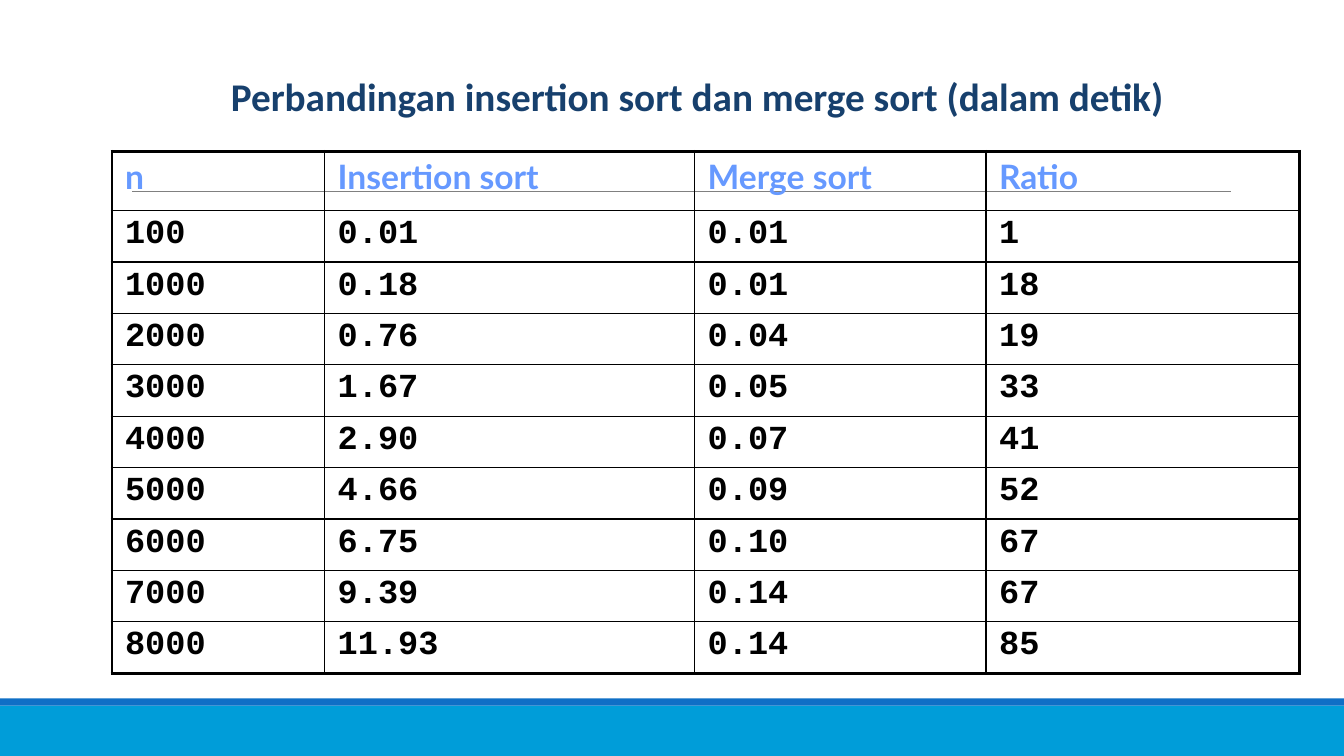
from lxml import etree
from pptx import Presentation
from pptx.dml.color import RGBColor
from pptx.enum.shapes import MSO_CONNECTOR, MSO_SHAPE
from pptx.enum.text import MSO_ANCHOR, PP_ALIGN
from pptx.oxml import parse_xml
from pptx.oxml.ns import nsdecls, qn
from pptx.util import Inches, Pt

SLIDE_WIDTH, SLIDE_HEIGHT = 13.33, 7.5
BLACK = "000000"
HEADER_COLOR = "6699FF"
COLUMN_WIDTHS = [2.11, 3.67, 2.89, 3.11]
HEADER_HEIGHT, ROW_HEIGHT = 0.59, 0.51
THIN, THICK = 1, 2.25

TIMINGS = [
    ("n", "Insertion sort", "Merge sort", "Ratio"),
    ("100", "0.01", "0.01", "1"),
    ("1000", "0.18", "0.01", "18"),
    ("2000", "0.76", "0.04", "19"),
    ("3000", "1.67", "0.05", "33"),
    ("4000", "2.90", "0.07", "41"),
    ("5000", "4.66", "0.09", "52"),
    ("6000", "6.75", "0.10", "67"),
    ("7000", "9.39", "0.14", "67"),
    ("8000", "11.93", "0.14", "85"),
]


def color(hex_code):
    return RGBColor.from_string(hex_code)


def set_font(font, name, size, hex_code):
    font.name, font.size, font.bold = name, Pt(size), True
    font.color.rgb = color(hex_code)


def add_bar(slide, top, height, hex_code):
    bar = slide.shapes.add_shape(
        MSO_SHAPE.RECTANGLE, 0, Inches(top), Inches(SLIDE_WIDTH), Inches(height))
    bar.shadow.inherit = False
    bar.fill.solid()
    bar.fill.fore_color.rgb = color(hex_code)
    bar.line.fill.background()


def add_footer(slide, height):
    """Draw the wide bar at the bottom edge with a thin stripe above it."""
    stripe_height = 0.07
    top = SLIDE_HEIGHT - height
    add_bar(slide, top, height, "009DD9")
    add_bar(slide, top - stripe_height, stripe_height, "0F6FC6")


def add_rule(slide, left, top, width):
    rule = slide.shapes.add_connector(
        MSO_CONNECTOR.STRAIGHT, Inches(left), Inches(top),
        Inches(left + width), Inches(top))
    rule.line.color.rgb = color("808080")
    rule.line.width = Pt(0.5)
    etree.SubElement(rule._element.spPr, qn("a:effectLst"))


def place_title(slide, text, left, top, width, height):
    title = slide.shapes.title
    title.left, title.top = Inches(left), Inches(top)
    title.width, title.height = Inches(width), Inches(height)
    title.text_frame.text = text
    title.text_frame.vertical_anchor = MSO_ANCHOR.MIDDLE
    paragraph = title.text_frame.paragraphs[0]
    paragraph.alignment = PP_ALIGN.LEFT
    set_font(paragraph.font, "Calibri", 28, "17406D")


def set_borders(cell, widths):
    """Give the cell black borders; widths maps the sides L, R, T, B to points."""
    properties = cell._tc.get_or_add_tcPr()
    for position, (side, width) in enumerate(widths.items()):
        properties.insert(position, parse_xml(
            f'<a:ln{side} {nsdecls("a")} w="{Pt(width)}">'
            f'<a:solidFill><a:srgbClr val="{BLACK}"/></a:solidFill></a:ln{side}>'))


def add_timing_table(slide, left, top):
    row_heights = [HEADER_HEIGHT] + [ROW_HEIGHT] * (len(TIMINGS) - 1)
    table = slide.shapes.add_table(
        len(TIMINGS), len(COLUMN_WIDTHS), Inches(left), Inches(top),
        Inches(sum(COLUMN_WIDTHS)), Inches(sum(row_heights))).table
    table.first_row = table.horz_banding = False
    for column, width in zip(table.columns, COLUMN_WIDTHS):
        column.width = Inches(width)
    for row, height in zip(table.rows, row_heights):
        row.height = Inches(height)

    last_row, last_column = len(TIMINGS) - 1, len(COLUMN_WIDTHS) - 1
    for row_index, values in enumerate(TIMINGS):
        for column_index, value in enumerate(values):
            cell = table.cell(row_index, column_index)
            cell.text = value
            cell.margin_left = cell.margin_right = Inches(0.13)
            cell.margin_top = cell.margin_bottom = Inches(0.05)
            cell.fill.background()
            name, hex_code = (
                ("Lato", HEADER_COLOR) if row_index == 0 else ("Courier New", BLACK))
            set_font(cell.text_frame.paragraphs[0].font, name, 24, hex_code)
            # The outer frame is thicker than the inner grid
            set_borders(cell, {
                "L": THICK if column_index == 0 else THIN,
                "R": THICK if column_index == last_column else THIN,
                "T": THICK if row_index == 0 else THIN,
                "B": THICK if row_index == last_row else THIN,
            })


def main():
    presentation = Presentation()
    presentation.slide_width = Inches(SLIDE_WIDTH)
    presentation.slide_height = Inches(SLIDE_HEIGHT)
    slide = presentation.slides.add_slide(presentation.slide_layouts[5])

    # Background decoration
    add_footer(slide, 0.5)
    add_rule(slide, 1.31, 1.9, 10.9)

    # Title and table
    place_title(slide, "Perbandingan insertion sort dan merge sort (dalam detik)",
                2.19, 0.58, 10.33, 0.75)
    add_timing_table(slide, 1.11, 1.5)

    presentation.save("out.pptx")


if __name__ == "__main__":
    main()
